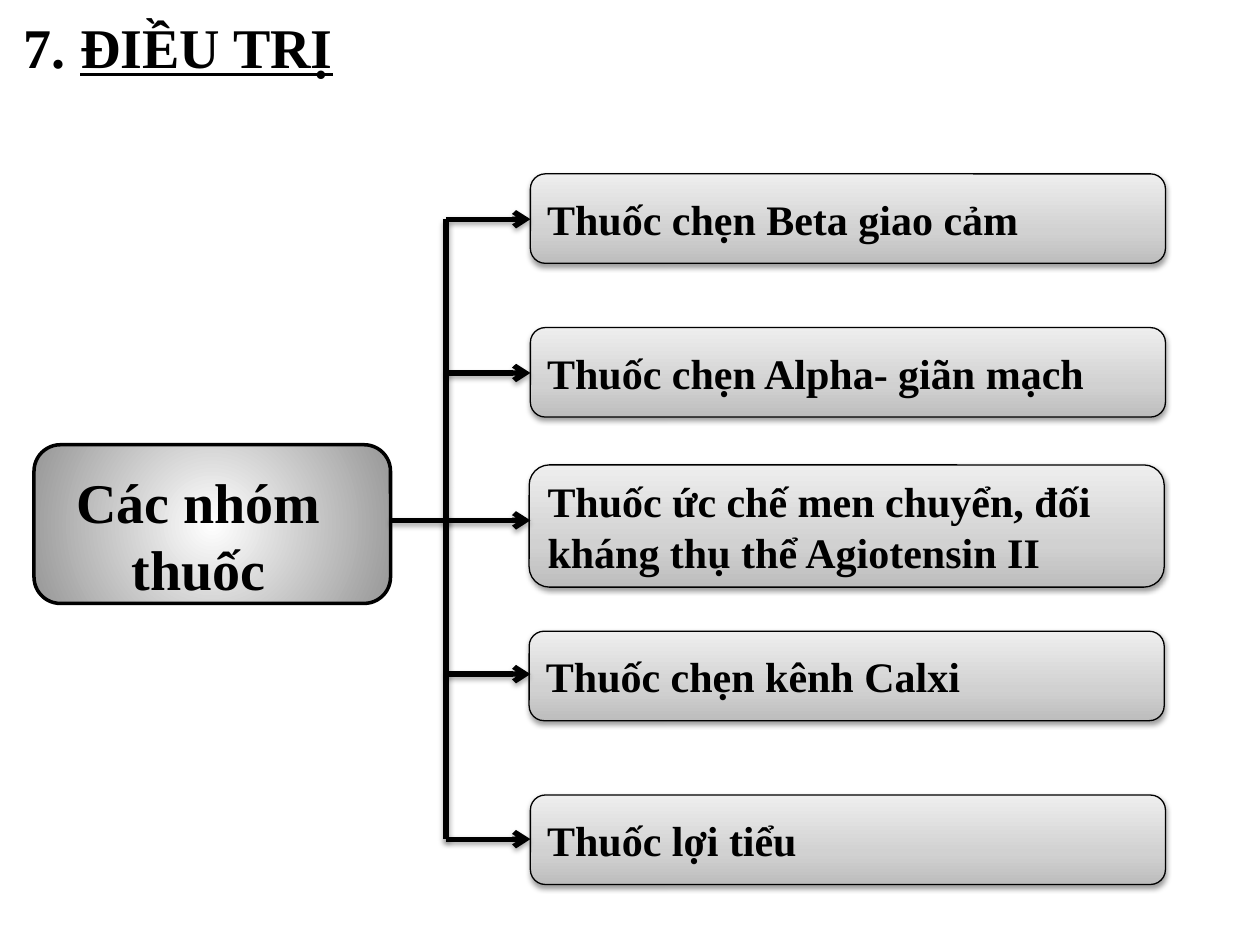
from dataclasses import dataclass
from lxml.etree import SubElement as Sub
from pptx import Presentation
from pptx.dml.color import RGBColor
from pptx.enum.shapes import MSO_CONNECTOR as Conn, MSO_SHAPE as Kind
from pptx.enum.text import MSO_ANCHOR as Anchor, MSO_AUTO_SIZE as Fit, PP_ALIGN as Align
from pptx.oxml import parse_xml
from pptx.oxml.ns import nsdecls, qn
from pptx.util import Inches, Pt

INK = "000000"
FONT = "Times New Roman"
LEFT, WIDE, TRUNK, ROOT = 4.21, 5.04, 3.54, 4.13


@dataclass
class Drug:
    """One drug group and the height of its arrow."""
    text: str
    top: float
    arrow: float
    left: float = LEFT
    high: float = 0.71


DRUGS = [
    Drug("Thuốc chẹn Beta giao cảm", 1.38, 1.74),
    Drug("Thuốc chẹn Alpha- giãn mạch", 2.6, 2.96),
    Drug("Thuốc ức chế men chuyển, đối kháng thụ thể Agiotensin II", 3.69, ROOT, 4.2, 0.97),
    Drug("Thuốc chẹn kênh Calxi", 5.01, 5.35, 4.2),
    Drug("Thuốc lợi tiểu", 6.31, 6.66),
]
SILVER = [(0, "BDBDBD"), (35, "D1D1D1"), (100, "EEEEEE")]
GLOW = [(0, "FFFFFF"), (100, "979797")]
UPWARD = '<a:lin ang="16200000" scaled="0"/>'
CENTRE = '<a:path path="circle"><a:fillToRect l="50000" t="50000" r="50000" b="50000"/></a:path>'


def paint(target, hex: str) -> None:
    """Give a font or a solid fill its colour."""
    target.rgb = RGBColor.from_string(hex)


def style(run, size: int) -> None:
    """Format a run in the bold slide face."""
    font = run.font
    font.name, font.size, font.bold = FONT, Pt(size), True
    paint(font.color, INK)


def shade(props, alpha: int, dist: float) -> None:
    """Cast a soft shadow straight down."""
    props.append(parse_xml(
        f'<a:effectLst {nsdecls("a")}><a:outerShdw blurRad="{Pt(3.1)}" dist="{Pt(dist)}" '
        f'dir="5400000" rotWithShape="0"><a:srgbClr val="{INK}">'
        f'<a:alpha val="{alpha * 1000}"/></a:srgbClr></a:outerShdw></a:effectLst>'))


def stroke(line, width: float) -> None:
    """Draw an outline in ink."""
    line.width = Pt(width)
    paint(line.fill_color if hasattr(line, "fill_color") else line.color, INK)


def panel(slide, box: tuple, stops: list, way: str, width: float):
    """Add a rounded box with a gradient fill."""
    shape = slide.shapes.add_shape(Kind.ROUNDED_RECTANGLE, *map(Inches, box))
    stroke(shape.line, width)
    shape.fill.background()
    props = shape._element.spPr
    marks = "".join(f'<a:gs pos="{pos * 1000}"><a:srgbClr val="{hex}"/></a:gs>' for pos, hex in stops)
    grad = parse_xml(f'<a:gradFill {nsdecls("a")} rotWithShape="1"><a:gsLst>{marks}</a:gsLst>{way}</a:gradFill>')
    props.replace(props.find(qn("a:noFill")), grad)
    return shape


def link(slide, start: tuple, end: tuple, arrow: bool = False) -> None:
    """Add a thick line, with an arrowhead if asked."""
    line = slide.shapes.add_connector(Conn.STRAIGHT, *map(Inches, start + end))
    stroke(line.line, 3)
    props = line._element.spPr
    if arrow:
        Sub(props.find(qn("a:ln")), qn("a:tailEnd"), type="arrow")
    shade(props, 35, 1.8)


def group(slide, drug: Drug) -> None:
    """Add the box of one drug group."""
    shape = panel(slide, (drug.left, drug.top, WIDE, drug.high), SILVER, UPWARD, 0.75)
    shade(shape._element.spPr, 38, 1.6)
    frame = shape.text_frame
    frame.text, frame.word_wrap = drug.text, True
    frame.vertical_anchor = Anchor.MIDDLE
    para = frame.paragraphs[0]
    para.alignment = Align.LEFT
    style(para.runs[0], 24)


def head(slide) -> None:
    """Fill the title with its underlined heading."""
    title = slide.shapes.title
    title.left, title.top, title.width, title.height = map(Inches, (0.09, 0.05, 2.68, 0.64))
    frame = title.text_frame
    frame.word_wrap, frame.auto_size = False, Fit.SHAPE_TO_FIT_TEXT
    frame.vertical_anchor = Anchor.TOP
    para = frame.paragraphs[0]
    para.alignment = Align.LEFT
    for text, under in (("7. ", False), ("ĐIỀU TRỊ", True)):
        run = para.add_run()
        run.text = text
        style(run, 32)
        run.font.underline = under


def root(slide) -> None:
    """Add the box that the groups branch from."""
    shape = panel(slide, (0.27, 3.53, 2.83, 1.26), GLOW, CENTRE, 2)
    shape.shadow.inherit = False
    label = slide.shapes.add_textbox(*map(Inches, (0.28, 3.66, 2.59, 1.18)))
    frame = label.text_frame
    frame.text, frame.word_wrap = "Các nhóm thuốc", True
    frame.auto_size = Fit.SHAPE_TO_FIT_TEXT
    para = frame.paragraphs[0]
    para.alignment = Align.CENTER
    style(para.runs[0], 32)


def main() -> None:
    """Build the slide and save it."""
    deck = Presentation()
    deck.slide_width, deck.slide_height = Inches(10), Inches(7.5)
    slide = deck.slides.add_slide(deck.slide_layouts[5])
    head(slide)
    root(slide)
    for drug in DRUGS:
        group(slide, drug)
    link(slide, (3.1, ROOT), (3.57, ROOT))
    link(slide, (TRUNK, DRUGS[-1].arrow), (TRUNK, DRUGS[0].arrow))
    for drug in DRUGS:
        link(slide, (TRUNK, drug.arrow), (LEFT, drug.arrow), True)
    deck.save("out.pptx")


if __name__ == "__main__":
    main()
